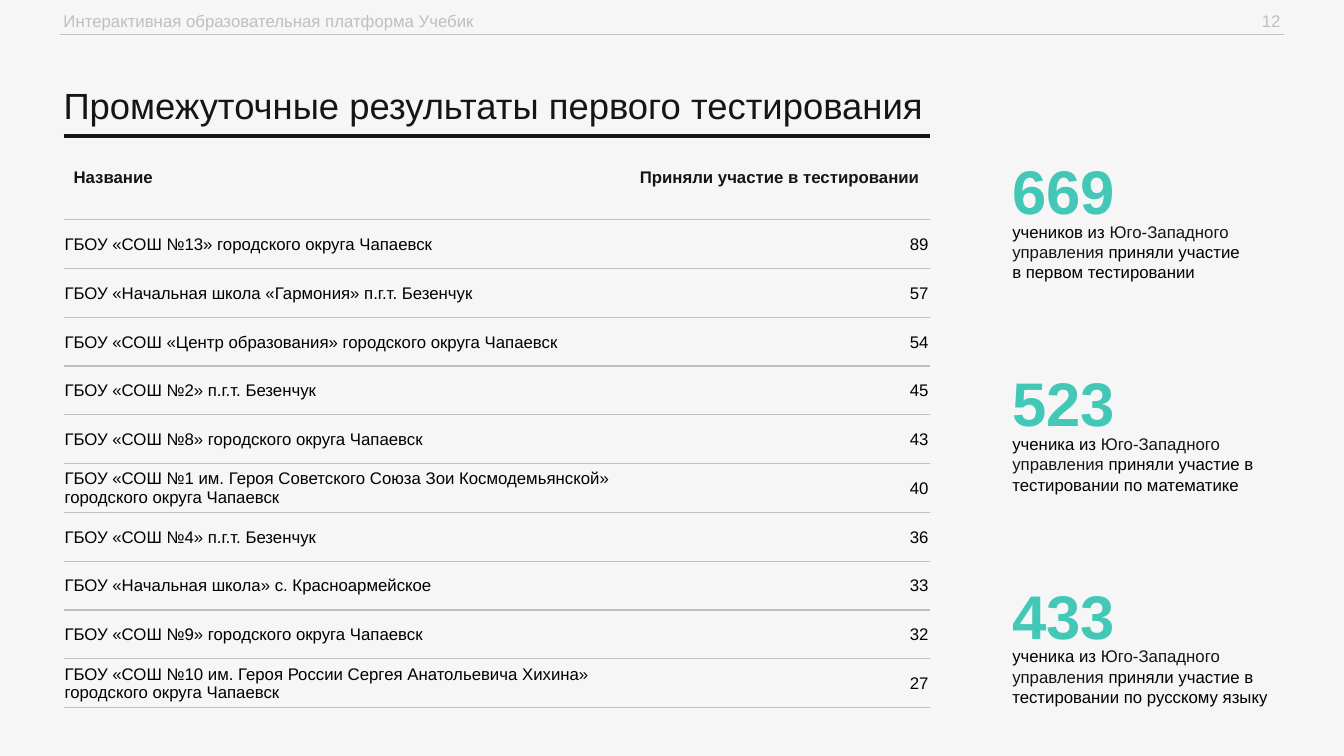
from dataclasses import dataclass

from lxml import etree
from pptx import Presentation, util as u
from pptx.dml import color
from pptx.enum import shapes, text
from pptx.oxml import ns


@dataclass(frozen=True)
class Theme:
    """Holds the colours, type sizes and font of the slide."""
    face: str = "Arial"
    back: str = "F6F6F6"
    ink: str = "151515"
    black: str = "000000"
    gray: str = "BFBFBF"
    teal: str = "43C8B7"
    small: int = 12
    head: int = 26
    big: int = 44


THEME = Theme()
LEFT, RIGHT = text.PP_ALIGN.LEFT, text.PP_ALIGN.RIGHT

SCHOOLS = [
    ("ГБОУ «СОШ №13» городского округа Чапаевск", 89),
    ("ГБОУ «Начальная школа «Гармония» п.г.т. Безенчук", 57),
    ("ГБОУ «СОШ «Центр образования» городского округа Чапаевск", 54),
    ("ГБОУ «СОШ №2» п.г.т. Безенчук", 45),
    ("ГБОУ «СОШ №8» городского округа Чапаевск", 43),
    ("ГБОУ «СОШ №1 им. Героя Советского Союза Зои Космодемьянской» "
     "городского округа Чапаевск", 40),
    ("ГБОУ «СОШ №4» п.г.т. Безенчук", 36),
    ("ГБОУ «Начальная школа» с. Красноармейское", 33),
    ("ГБОУ «СОШ №9» городского округа Чапаевск", 32),
    ("ГБОУ «СОШ №10 им. Героя России Сергея Анатольевича Хихина» "
     "городского округа Чапаевск", 27),
]
STATS = [
    ("669", "учеников", "в первом тестировании", 2.3),
    ("523", "ученика", "в тестировании по математике", 2.79),
    ("433", "ученика", "в тестировании по русскому языку", 2.67),
]


def rgb(code):
    """Turns a hex code into a colour."""
    return color.RGBColor.from_string(code)


def style(para, size, tint, bold=False, align=LEFT):
    """Formats a whole paragraph."""
    para.alignment = align
    font = para.font
    font.name, font.size, font.bold = THEME.face, u.Pt(size), bold
    font.color.rgb = rgb(tint)


def trim(frame):
    """Makes a text frame wrap without insets."""
    frame.word_wrap = True
    frame.auto_size = text.MSO_AUTO_SIZE.NONE
    frame.vertical_anchor = text.MSO_ANCHOR.TOP
    frame.margin_left = frame.margin_right = 0
    frame.margin_top = frame.margin_bottom = 0


def label(parent, box, parts, size, tint, bold=False, align=LEFT):
    """Adds a text box of (words, colour) parts."""
    frame = parent.add_textbox(*map(u.Inches, box)).text_frame
    trim(frame)
    para = frame.paragraphs[0]
    style(para, size, tint, bold, align)
    for words, shade in parts:
        run = para.add_run()
        run.text = words
        if shade != tint:
            run.font.color.rgb = rgb(shade)


def strip(slide, box):
    """Draws the running header, page number and rule."""
    x, y, w, h = box
    gray = THEME.gray
    name = "Интерактивная образовательная платформа Учебик"
    label(slide.shapes, (x + 0.03, y, 4.84, h), [(name, gray)],
          THEME.small, gray)
    label(slide.shapes, (x + w - 0.81, y, 0.78, h), [("12", gray)],
          THEME.small, gray, align=RIGHT)
    base = u.Inches(y + 0.23)
    rule = slide.shapes.add_connector(shapes.MSO_CONNECTOR.STRAIGHT,
                                      u.Inches(x), base, u.Inches(x + w), base)
    rule.line.color.rgb, rule.line.width = rgb(gray), u.Pt(0.75)
    etree.SubElement(rule.element.spPr, ns.qn("a:effectLst"))


def title(slide, box):
    """Fills and places the title."""
    head = slide.shapes.title
    head.left, head.top, head.width, head.height = map(u.Inches, box)
    trim(head.text_frame)
    head.text_frame.text = "Промежуточные результаты первого тестирования"
    para = head.text_frame.paragraphs[0]
    para.line_spacing = 0.9
    style(para, THEME.head, THEME.ink)


def edge(cell, side, width=0, tint=None):
    """Sets one cell border, or hides it when it has no colour."""
    line = etree.SubElement(cell._tc.get_or_add_tcPr(), ns.qn("a:ln" + side),
                            w=str(u.Pt(width)))
    if tint:
        fill = etree.SubElement(line, ns.qn("a:solidFill"))
        etree.SubElement(fill, ns.qn("a:srgbClr"), val=tint)
    else:
        etree.SubElement(line, ns.qn("a:noFill"))


def fill_cell(cell, words, first, align):
    """Writes and formats one table cell."""
    cell.text = words
    cell.vertical_anchor = text.MSO_ANCHOR.MIDDLE
    cell.margin_left = cell.margin_right = u.Inches(0.1 if first else 0.01)
    cell.margin_top = u.Inches(0.05 if first else 0.01)
    cell.margin_bottom = u.Inches(0.05 if first else 0)
    style(cell.text_frame.paragraphs[0], THEME.small,
          THEME.ink if first else THEME.black, first, align)
    edge(cell, "L")
    edge(cell, "R")
    edge(cell, "T", 3 if first else 1, THEME.ink if first else THEME.gray)
    edge(cell, "B", 1, THEME.gray)
    cell.fill.background()


def grid(slide, box, top=0.83, split=5.49):
    """Builds the table of schools."""
    rows = [("Название", "Приняли участие в тестировании"), *SCHOOLS]
    table = slide.shapes.add_table(len(rows), 2, *map(u.Inches, box)).table
    table.first_row = table.horz_banding = False
    table.columns[0].width = u.Inches(split)
    table.columns[1].width = u.Inches(box[2] - split)
    step = (box[3] - top) / len(SCHOOLS)
    for r, row in enumerate(rows):
        table.rows[r].height = u.Inches(step if r else top)
        for c, (value, align) in enumerate(zip(row, (LEFT, RIGHT))):
            fill_cell(table.cell(r, c), str(value), r == 0, align)


def stats(slide, box):
    """Stacks the key figures with their captions."""
    x, y, w, h = box
    cap = 0.61
    step = (h - 0.68 - cap) / (len(STATS) - 1)
    for i, (count, who, what, wide) in enumerate(STATS):
        top = y + i * step
        group = slide.shapes.add_group_shape().shapes
        parts = [(who + " из ", THEME.black),
                 ("Юго-Западного управления", THEME.ink),
                 (" приняли участие " + what, THEME.black)]
        label(group, (x, top + 0.68, wide, cap), parts,
              THEME.small, THEME.black)
        label(group, (x, top, w, 0.74), [(count, THEME.teal)],
              THEME.big, THEME.teal, True)


def main():
    """Builds and saves the slide."""
    deck = Presentation()
    deck.slide_width, deck.slide_height = u.Inches(13.33), u.Inches(7.5)
    slide = deck.slides.add_slide(deck.slide_layouts[5])
    slide.background.fill.solid()
    slide.background.fill.fore_color.rgb = rgb(THEME.back)
    strip(slide, (0.6, 0.11, 12.13, 0.2))
    grid(slide, (0.63, 1.35, 8.59, 5.67))
    title(slide, (0.63, 0.87, 10.66, 0.39))
    stats(slide, (10.04, 1.52, 2.69, 5.5))
    deck.save("out.pptx")


if __name__ == "__main__":
    main()
